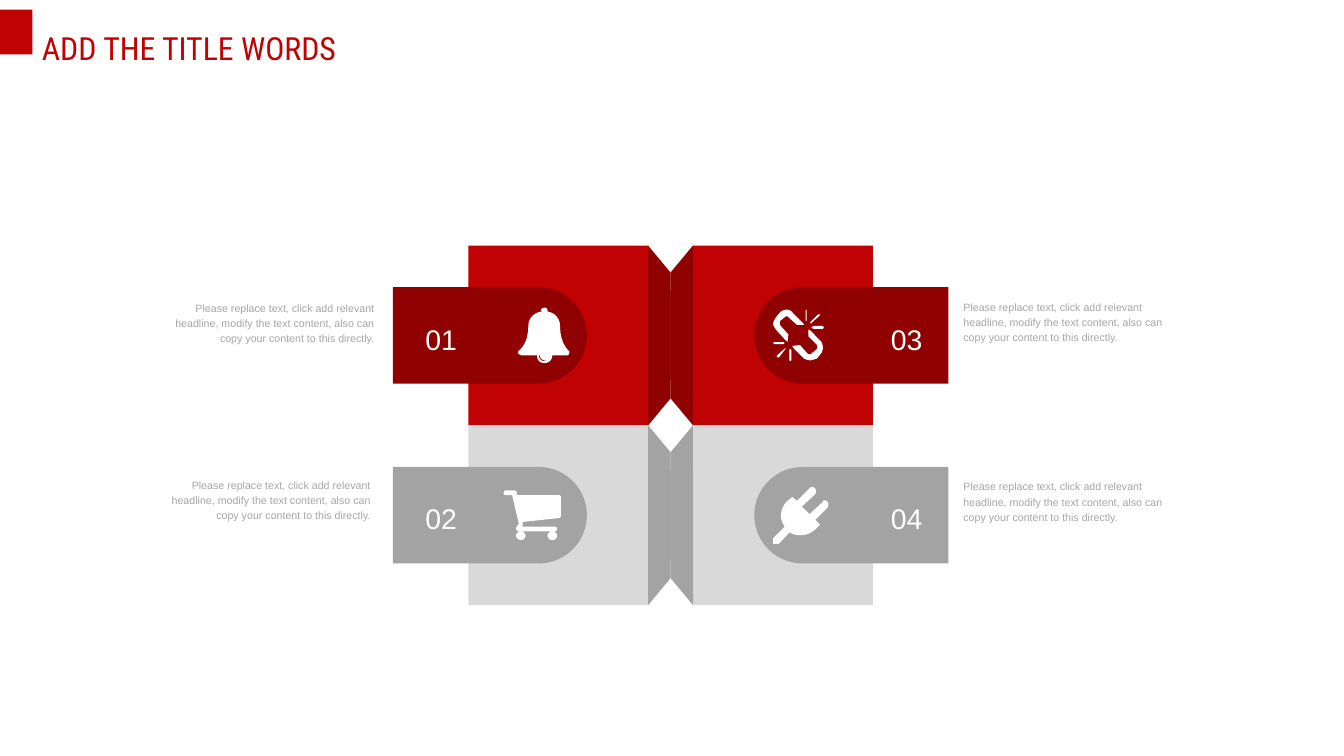
from pptx import Presentation
from pptx.dml.color import RGBColor
from pptx.enum.shapes import MSO_SHAPE as Shape
from pptx.enum.text import MSO_ANCHOR as Anchor, MSO_AUTO_SIZE as AutoSize, PP_ALIGN as Align
from pptx.oxml.ns import qn
from pptx.util import Pt

COLORS = {"red": "C00202", "dark_red": "900101", "light_gray": "D9D9D9",
          "gray": "A3A3A3", "caption": "A6A6A6", "white": "FFFFFF"}
TITLE = "ADD THE TITLE WORDS"
CAPTION = ("Please replace text, click add relevant headline, modify the text content, "
           "also can copy your content to this directly.")

# Each icon is a list of outlines: a pair is a corner, six numbers are a Bézier curve.
BELL = [
    [(51, 50), (36, 50), (36, 55, 32, 58, 28, 58), (23, 58, 20, 55, 20, 50), (5, 50),
     (2, 50, 0, 48, 0, 46), (5, 42, 11, 35, 11, 18), (11, 12, 16, 5, 25, 4), (24, 3),
     (24, 1, 26, 0, 28, 0), (30, 0, 31, 1, 31, 3), (31, 4), (39, 5, 44, 12, 44, 18),
     (44, 35, 50, 42, 54, 46), (54, 48, 53, 50, 51, 50)],
    [(28, 55), (25, 55, 23, 52, 23, 50), (22, 49), (22, 50), (22, 53, 24, 56, 28, 56)],
]
CART = [
    [(60, 26), (60, 28, 59, 29, 58, 29), (20, 33), (20, 36), (20, 37, 20, 37, 19, 38),
     (53, 38), (55, 38, 56, 39, 56, 40), (56, 42, 55, 43, 53, 43), (16, 43),
     (15, 43, 13, 42, 13, 40), (13, 39, 15, 36, 16, 35), (9, 5), (2, 5),
     (1, 5, 0, 4, 0, 3), (0, 2, 1, 0, 2, 0), (11, 0), (14, 0, 14, 3, 14, 5), (58, 5),
     (59, 5, 60, 6, 60, 7)],
    [(18, 52), (16, 52, 13, 50, 13, 47), (13, 45, 16, 43, 18, 43),
     (21, 43, 23, 45, 23, 47), (23, 50, 21, 52, 18, 52)],
    [(51, 52), (48, 52, 46, 50, 46, 47), (46, 45, 48, 43, 51, 43),
     (54, 43, 56, 45, 56, 47), (56, 50, 54, 52, 51, 52)],
]
BROKEN_LINK = [
    [(11, 36), (1, 36), (0, 35), (1, 34), (11, 34), (12, 35)],
    [(25, 16), (16, 8), (16, 7, 15, 7, 14, 7), (13, 7, 13, 7, 12, 8), (7, 12),
     (7, 13, 7, 14, 7, 15), (7, 16), (16, 26), (15, 34), (15, 33, 14, 33, 13, 32), (3, 21),
     (2, 19, 0, 17, 0, 15), (0, 12, 2, 10, 3, 8), (7, 3), (9, 1, 12, 0, 14, 0),
     (17, 0, 19, 1, 21, 4), (31, 14), (32, 15, 32, 16, 33, 16)],
    [(6, 50), (4, 50), (4, 48), (13, 40), (13, 41)],
    [(19, 53), (18, 54), (17, 53), (17, 42), (18, 41), (19, 42)],
    [(50, 46), (46, 51), (43, 52, 41, 53, 39, 53), (36, 53, 34, 52, 32, 51), (21, 40),
     (20, 38), (28, 37), (36, 46), (38, 47, 40, 47, 40, 46), (46, 41),
     (46, 37), (37, 28), (37, 21), (38, 21, 39, 22, 39, 22), (50, 33),
     (51, 34, 52, 37, 52, 40), (52, 42, 51, 45, 50, 46)],
    [(35, 12), (34, 11), (34, 1), (35, 0)],
    [(40, 14), (40, 15), (39, 14), (39, 13), (47, 5), (49, 5), (49, 6)],
    [(52, 20), (42, 20), (40, 19), (42, 17), (52, 17), (53, 19)],
]
PLUG = [
    [(57, 22), (44, 35), (49, 40), (44, 45), (36, 52, 26, 53, 17, 48), (6, 60), (0, 60),
     (0, 54), (12, 42), (6, 34, 7, 23, 14, 16), (20, 11), (25, 15), (38, 2),
     (39, 0, 42, 0, 44, 2), (45, 4, 45, 6, 44, 8), (30, 21), (38, 29), (52, 16),
     (52, 14, 55, 14, 57, 16), (58, 18, 58, 20, 57, 22)],
]

# number, column, row, icon, icon corner, caption box (left, top, width)
PANELS = [
    ("01", 0, 0, BELL, (390.2, 231.8), (127.4, 225.4, 154.8)),
    ("02", 0, 1, CART, (379.4, 369.4), (124.6, 358.6, 154.8)),
    ("03", 1, 0, BROKEN_LINK, (582.5, 233.3), (725.8, 224.6, 157)),
    ("04", 1, 1, PLUG, (582.5, 366.5), (725.8, 360, 157)),
]
ROW_COLORS = [("red", "dark_red"), ("light_gray", "gray")]
CENTER, TOP = 505.2, 185
SIDE = 135.4
FOLD_WIDTH, FOLD_HEIGHT = 16.9, 101.5
TAB_WIDTH, TAB_LENGTH, TAB_OFFSET = 72.7, 146.2, 136.2
NUMBER_LEFTS, NUMBER_TOP = (311, 661.7), 239
ICON_UNIT = 0.72
CURVE_STEPS = 6


def paint(shape, color):
    shape.shadow.inherit = False
    shape.fill.solid()
    shape.fill.fore_color.rgb = RGBColor.from_string(COLORS[color])
    shape.line.fill.background()


def add_block(shapes, kind, box, color, rotation=0, flip=False):
    shape = shapes.add_shape(kind, *map(Pt, box))
    paint(shape, color)
    shape.rotation = rotation
    if flip:
        shape._element.spPr.find(qn("a:xfrm")).set("flipH", "1")
    return shape


def add_text(shapes, text, box, size, color, font="Arial", align=Align.LEFT, spacing=1.2,
             before=0, margins=(0, 0), anchor=Anchor.TOP, wrap=True, grow=True):
    frame = shapes.add_textbox(*map(Pt, box)).text_frame
    frame.margin_left = frame.margin_right = Pt(margins[0])
    frame.margin_top = frame.margin_bottom = Pt(margins[1])
    frame.word_wrap = wrap
    frame.vertical_anchor = anchor
    frame.auto_size = AutoSize.SHAPE_TO_FIT_TEXT if grow else AutoSize.NONE
    paragraph = frame.paragraphs[0]
    paragraph.alignment = align
    paragraph.line_spacing = spacing
    paragraph.space_before = Pt(before)
    run = paragraph.add_run()
    run.text = text
    run.font.name, run.font.size = font, Pt(size)
    run.font.color.rgb = RGBColor.from_string(COLORS[color])


def flatten(outline):
    """Turn corners and curves into one list of points."""
    points = []
    for step in outline:
        if len(step) == 2:
            points.append(step)
            continue
        controls = (points[-1], step[:2], step[2:4], step[4:])
        for index in range(1, CURVE_STEPS + 1):
            t = index / CURVE_STEPS
            weights = ((1 - t) ** 3, 3 * t * (1 - t) ** 2, 3 * t * t * (1 - t), t ** 3)
            points.append(tuple(sum(weight * control[axis]
                                    for weight, control in zip(weights, controls))
                                for axis in (0, 1)))
    return points


def add_icon(shapes, outlines, corner):
    builder = None
    for outline in outlines:
        points = [tuple(Pt(start + ICON_UNIT * value) for start, value in zip(corner, point))
                  for point in flatten(outline)]
        if builder is None:
            builder = shapes.build_freeform(*points[0], scale=1.0)
        else:
            builder.move_to(*points[0])
        builder.add_line_segments(points[1:], close=True)
    paint(builder.convert_to_shape(), "white")


def add_panel(shapes, number, column, row, icon, icon_corner, caption_box):
    face, shade = ROW_COLORS[row]
    on_left = column == 0
    direction = -1 if on_left else 1
    top = TOP + row * SIDE
    face_left = CENTER - FOLD_WIDTH - SIDE if on_left else CENTER + FOLD_WIDTH
    fold_left = CENTER - FOLD_WIDTH if on_left else CENTER
    fold_bottom = top + SIDE - FOLD_HEIGHT

    group = shapes.add_group_shape().shapes
    add_block(group, Shape.RECTANGLE, (face_left, top, SIDE, SIDE), face)
    for fold_top, rotation, flip in ((top, 0, on_left), (fold_bottom, 180, not on_left)):
        add_block(group, Shape.FLOWCHART_MANUAL_INPUT,
                  (fold_left, fold_top, FOLD_WIDTH, FOLD_HEIGHT), shade, rotation, flip)

    tab_left = CENTER + direction * TAB_OFFSET - TAB_WIDTH / 2
    tab_top = top + (SIDE - TAB_LENGTH) / 2
    tab = add_block(shapes, Shape.ROUND_2_SAME_RECTANGLE,
                    (tab_left, tab_top, TAB_WIDTH, TAB_LENGTH), shade, 90 if on_left else 270)
    tab.adjustments[0], tab.adjustments[1] = 0.5, 0
    add_icon(shapes, icon, icon_corner)
    add_text(shapes, number, (NUMBER_LEFTS[column], NUMBER_TOP + row * SIDE, 42.5, 27.4),
             21.4, "white", align=Align.CENTER, before=4.28, anchor=Anchor.MIDDLE,
             wrap=False, grow=False)
    add_text(shapes, CAPTION, (*caption_box, 33.8), 8, "caption",
             align=Align.RIGHT if on_left else Align.LEFT)


def main():
    presentation = Presentation()
    presentation.slide_width, presentation.slide_height = Pt(1012.5), Pt(569.5)
    shapes = presentation.slides.add_slide(presentation.slide_layouts[6]).shapes
    add_block(shapes, Shape.RECTANGLE, (0, 7.2, 24.5, 33.8), "red")
    for panel in PANELS:
        add_panel(shapes, *panel)
    add_text(shapes, TITLE, (24.5, 3.6, 254.9, 45.4), 24, "red", font="Roboto Condensed",
             spacing=1.5, margins=(7.2, 3.6))
    presentation.save("out.pptx")


if __name__ == "__main__":
    main()
